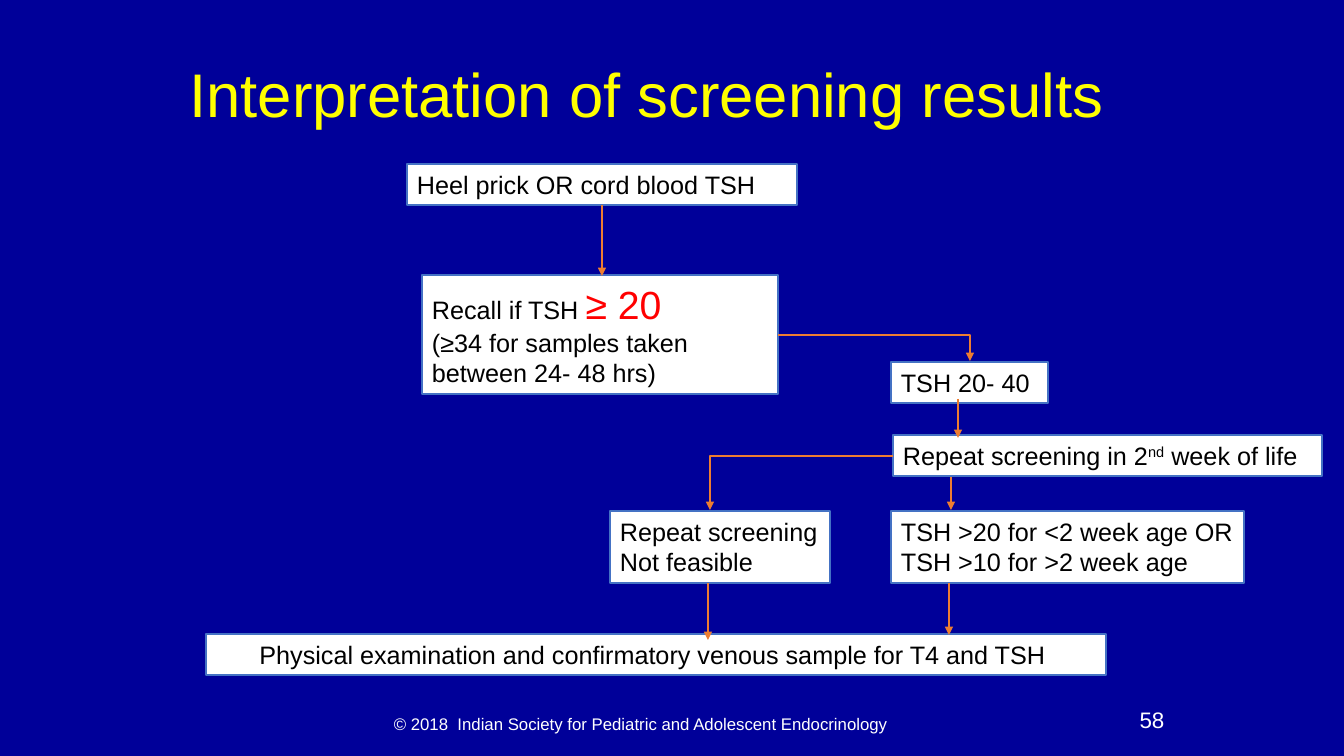
import pptx
import pptx.util
import pptx.dml.color
import pptx.enum.shapes
import pptx.enum.text
import pptx.oxml.ns
from dataclasses import dataclass
from lxml import etree

ALIGN = pptx.enum.text.PP_ALIGN
ANCHOR = pptx.enum.text.MSO_ANCHOR
LINK = pptx.enum.shapes.MSO_CONNECTOR
SIDE_BOTTOM = 2


@dataclass
class Theme:
    font: str = "Arial"
    back: str = "000099"
    title: str = "FFFF00"
    pale: str = "FFFFFF"
    ink: str = "000000"
    alert: str = "FF0000"
    edge: str = "4472C4"
    arrow: str = "ED7D31"
    title_size: int = 44
    alert_size: int = 28
    body_size: int = 18
    number_size: int = 16
    footer_size: int = 12


theme = Theme()
PX = 914400 / 100.8
PAGE_SIZE = (1344, 756)

# Content: every paragraph is a list of (text, style) spans
STYLES = {
    "title": dict(size=theme.title_size, color=theme.title),
    "body": dict(size=theme.body_size, color=theme.ink),
    "raised": dict(size=theme.body_size, color=theme.ink, baseline=30000),
    "alert": dict(size=theme.alert_size, color=theme.alert),
    "footer": dict(size=theme.footer_size, color=theme.pale),
    "number": dict(size=theme.number_size, color=theme.pale),
}

LABELS = [
    ((76, 25, 1159, 146), ANCHOR.MIDDLE, 0.9,
     [[("Interpretation of screening results ", "title")]]),
    ((380, 701, 522, 45), ANCHOR.MIDDLE, 1.0,
     [[("© 2018  Indian Society for Pediatric and Adolescent Endocrinology", "footer")]]),
    ((1001, 701, 302, 40), ANCHOR.TOP, 1.0, [[("58", "number")]]),
]

# name: place, alignment, wrap, paragraphs
STEPS = {
    "sample": ((407, 164, 390, 41), ALIGN.LEFT, True,
               [[("Heel prick OR cord blood TSH", "body")]]),
    "recall": ((422, 275, 356, 119), ALIGN.LEFT, True,
               [[("Recall if TSH ", "body"), ("≥ 20", "alert")],
                [("(≥34 for samples taken between 24- 48 hrs)", "body")]]),
    "borderline": ((891, 362, 157, 41), ALIGN.LEFT, False,
                   [[("TSH 20- 40", "body")]]),
    "confirm": ((206, 634, 900, 41), ALIGN.CENTER, True,
                [[("Physical examination and confirmatory venous sample for T4 and TSH ", "body")]]),
    "repeat": ((893, 435, 429, 41), ALIGN.LEFT, True,
               [[("Repeat screening in 2", "body"), ("nd", "raised"),
                 (" week of life", "body")]]),
    "cutoffs": ((891, 511, 353, 72), ALIGN.LEFT, True,
                [[("TSH >20 for <2 week age OR", "body")],
                 [("TSH >10 for >2 week age", "body")]]),
    "not_feasible": ((610, 511, 220, 72), ALIGN.LEFT, False,
                     [[("Repeat screening", "body")], [("Not feasible", "body")]]),
}

# Downward arrows: x, top, bottom, step joined at its bottom middle
DROPS = [
    (602, 205, 276, "sample"),
    (958, 399, 438, None),
    (951, 477, 510, None),
    (949, 583, 635, None),
    (708, 583, 640, None),
]
# Sideways, then down: start and end points
ELBOWS = [(778, 335, 970, 361), (893, 456, 710, 510)]


def px(*values):
    return [pptx.util.Emu(round(value * PX)) for value in values]


def rgb(code):
    return pptx.dml.color.RGBColor.from_string(code)


def write(shape, paragraphs, align, anchor, wrap=True, spacing=1.0):
    frame = shape.text_frame
    frame.word_wrap = wrap
    frame.vertical_anchor = anchor
    for index, spans in enumerate(paragraphs):
        para = frame.paragraphs[0] if index == 0 else frame.add_paragraph()
        para.alignment = align
        para.line_spacing = spacing
        for text, style_name in spans:
            style = STYLES[style_name]
            span = para.add_run()
            span.text = text
            formats = {"name": theme.font, "size": pptx.util.Pt(style["size"])}
            for key, value in formats.items():
                setattr(span.font, key, value)
            span.font.color.rgb = rgb(style["color"])
            if "baseline" in style:
                span.font._element.set("baseline", str(style["baseline"]))


def add_step(page, place, align, wrap, paragraphs):
    box = page.shapes.add_shape(pptx.enum.shapes.MSO_SHAPE.RECTANGLE, *px(*place))
    box.shadow.inherit = False
    box.fill.solid()
    box.fill.fore_color.rgb = rgb(theme.pale)
    box.line.color.rgb = rgb(theme.edge)
    box.line.width = pptx.util.Pt(1)
    write(box, paragraphs, align, ANCHOR.TOP, wrap)
    box.text_frame.auto_size = pptx.enum.text.MSO_AUTO_SIZE.SHAPE_TO_FIT_TEXT
    return box


def add_arrow(page, kind, points):
    arrow = page.shapes.add_connector(kind, *px(*points))
    arrow.line.color.rgb = rgb(theme.arrow)
    arrow.line.width = pptx.util.Pt(1.5)
    qn = pptx.oxml.ns.qn
    etree.SubElement(arrow.line._get_or_add_ln(), qn("a:tailEnd"), type="triangle")
    properties = arrow._element.spPr
    etree.SubElement(properties, qn("a:effectLst"))
    if kind == LINK.ELBOW:
        properties.find(qn("a:prstGeom")).set("prst", "bentConnector2")
    return arrow


def main():
    deck = pptx.Presentation()
    deck.slide_width, deck.slide_height = px(*PAGE_SIZE)
    page = deck.slides.add_slide(deck.slide_layouts[6])
    page.background.fill.solid()
    page.background.fill.fore_color.rgb = rgb(theme.back)

    # Title, footer and page number
    for place, anchor, spacing, paragraphs in LABELS:
        label = page.shapes.add_textbox(*px(*place))
        write(label, paragraphs, ALIGN.CENTER, anchor, spacing=spacing)

    # Flow chart
    boxes = {name: add_step(page, *step) for name, step in STEPS.items()}
    for x, top, bottom, source in DROPS:
        arrow = add_arrow(page, LINK.STRAIGHT, (x, top, x, bottom))
        if source:
            arrow.begin_connect(boxes[source], SIDE_BOTTOM)
    for points in ELBOWS:
        add_arrow(page, LINK.ELBOW, points)

    deck.save("out.pptx")


if __name__ == "__main__":
    main()
